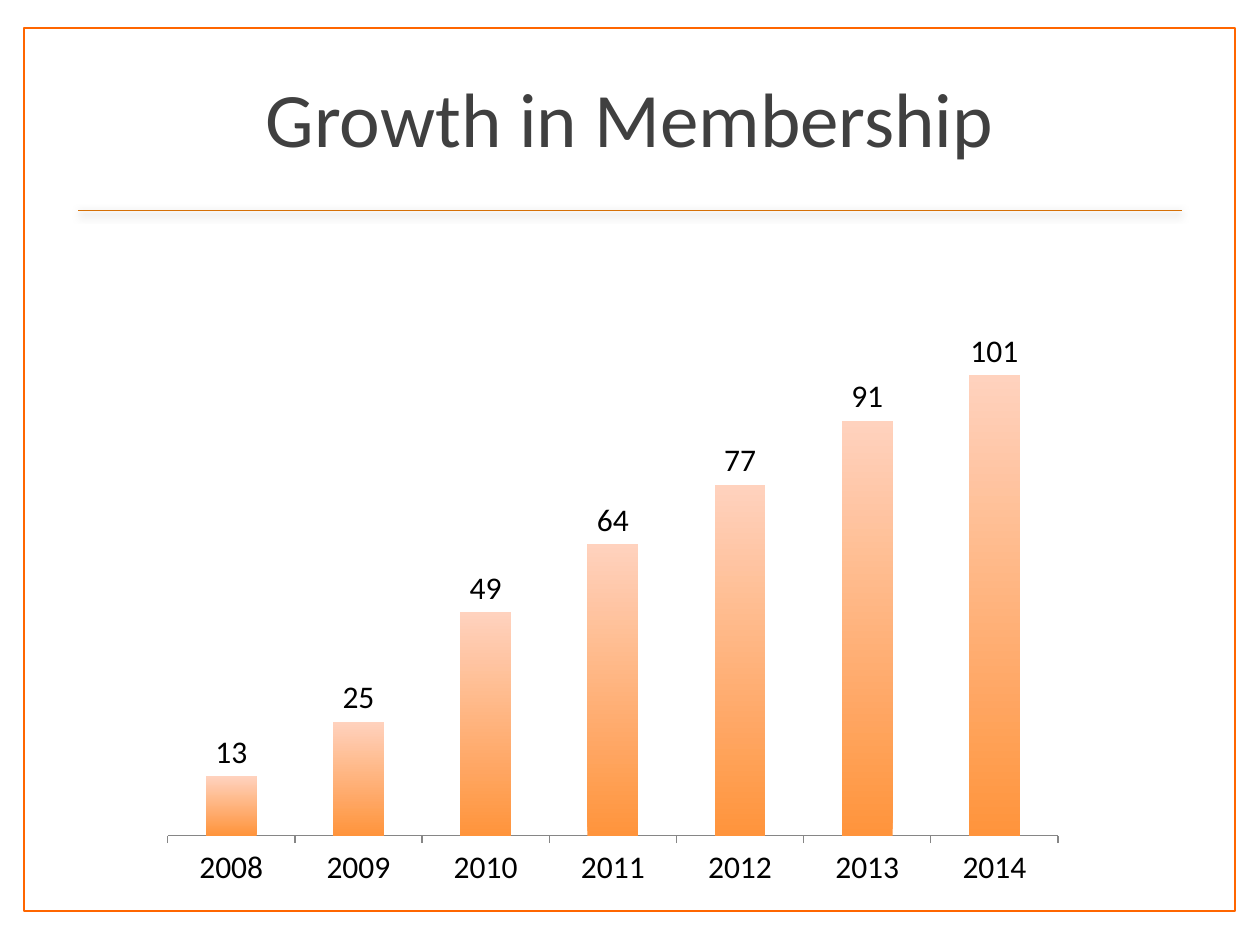
import lxml.etree
import pptx
import pptx.chart.data
import pptx.dml.color
import pptx.enum.chart
import pptx.enum.shapes
import pptx.enum.text
import pptx.oxml
import pptx.oxml.ns
import pptx.util

Inches = pptx.util.Inches
Pt = pptx.util.Pt
qn = pptx.oxml.ns.qn


def color(name):
    return pptx.dml.color.RGBColor.from_string(theme[name])


def set_font(font, size, color_name):
    formats = {"name": theme["font"], "size": Pt(theme[size]), "bold": False}
    for key, value in formats.items():
        setattr(font, key, value)
    font.color.rgb = color(color_name)


theme = {
    "font": "Calibri",
    "title_size": 44,
    "chart_size": 18,
    "paper": "FFFFFF",
    "frame": "FF6600",
    "rule": "D57007",
    "title": "404040",
    "label": "000000",
    "axis": "868686",
    "bar_bottom": "FF943C",
    "bar_top": "FFD2BE",
}
members = {"2008": 13, "2009": 25, "2010": 49, "2011": 64, "2012": 77, "2013": 91, "2014": 101}

deck = pptx.Presentation()
deck.slide_width, deck.slide_height = Inches(10), Inches(7.5)
page = deck.slides.add_slide(deck.slide_layouts[6])

frame = page.shapes.add_shape(
    pptx.enum.shapes.MSO_SHAPE.RECTANGLE, Inches(0.19), Inches(0.22), Inches(9.61), Inches(7.01)
)
frame.shadow.inherit = False
frame.fill.solid()
frame.fill.fore_color.rgb = color("paper")
frame.line.color.rgb = color("frame")
frame.line.width = Pt(1)

rule = page.shapes.add_connector(
    pptx.enum.shapes.MSO_CONNECTOR.STRAIGHT, Inches(0.62), Inches(1.67), Inches(9.38), Inches(1.67)
)
rule.line.color.rgb = color("rule")
rule.line.width = Pt(1)
effects = lxml.etree.SubElement(rule.line._get_or_add_ln().getparent(), qn("a:effectLst"))
shadow = lxml.etree.SubElement(
    effects, qn("a:outerShdw"), blurRad=str(Pt(5)), dist=str(Pt(1.8)), dir="5400000", rotWithShape="0"
)
shadow_color = lxml.etree.SubElement(shadow, qn("a:srgbClr"), val=theme["label"])
lxml.etree.SubElement(shadow_color, qn("a:alpha"), val="35000")

box = page.shapes.add_textbox(Inches(0.5), Inches(0.3), Inches(9), Inches(1.25))
box.text_frame.word_wrap = True
box.text_frame.vertical_anchor = pptx.enum.text.MSO_ANCHOR.MIDDLE
para = box.text_frame.paragraphs[0]
para.alignment = pptx.enum.text.PP_ALIGN.CENTER
span = para.add_run()
span.text = "Growth in Membership"
set_font(span.font, "title_size", "title")

data = pptx.chart.data.CategoryChartData()
data.categories = list(members)
data.add_series("Series 1", list(members.values()))
chart = page.shapes.add_chart(
    pptx.enum.chart.XL_CHART_TYPE.COLUMN_CLUSTERED,
    Inches(1.01), Inches(1.98), Inches(8.03), Inches(5.17), data,
).chart
chart.has_title = False
chart.has_legend = False
set_font(chart.font, "chart_size", "label")

value_format = {
    "visible": False,
    "has_major_gridlines": False,
    "minimum_scale": 0,
    "maximum_scale": 120,
}
category_format = {
    "has_major_gridlines": False,
    "major_tick_mark": pptx.enum.chart.XL_TICK_MARK.OUTSIDE,
}
for axis, formats in ((chart.value_axis, value_format), (chart.category_axis, category_format)):
    for key, value in formats.items():
        setattr(axis, key, value)
chart.category_axis.format.line.color.rgb = color("axis")
chart.category_axis.format.line.width = Pt(0.75)

plot = chart.plots[0]
plot.gap_width = 150
plot.vary_by_categories = False
plot.has_data_labels = True
plot.data_labels.show_value = True
plot.data_labels.position = pptx.enum.chart.XL_LABEL_POSITION.OUTSIDE_END
set_font(plot.data_labels.font, "chart_size", "label")

bars = plot.series[0]
bars.invert_if_negative = False
bars.format.fill.gradient()
bars.format.fill.gradient_angle = 90
for stop, name in zip(bars.format.fill.gradient_stops, ("bar_bottom", "bar_top")):
    stop.color.rgb = color(name)

layout = lxml.etree.Element(qn("c:layout"))
manual = lxml.etree.SubElement(layout, qn("c:manualLayout"))
placement = {
    "layoutTarget": "inner", "xMode": "edge", "yMode": "edge",
    "x": 0.04, "y": 0.06, "w": 0.88, "h": 0.84,
}
for key, value in placement.items():
    lxml.etree.SubElement(manual, qn("c:" + key), val=str(value))
chart._chartSpace.chart.plotArea.insert(0, layout)

deck.save("out.pptx")
